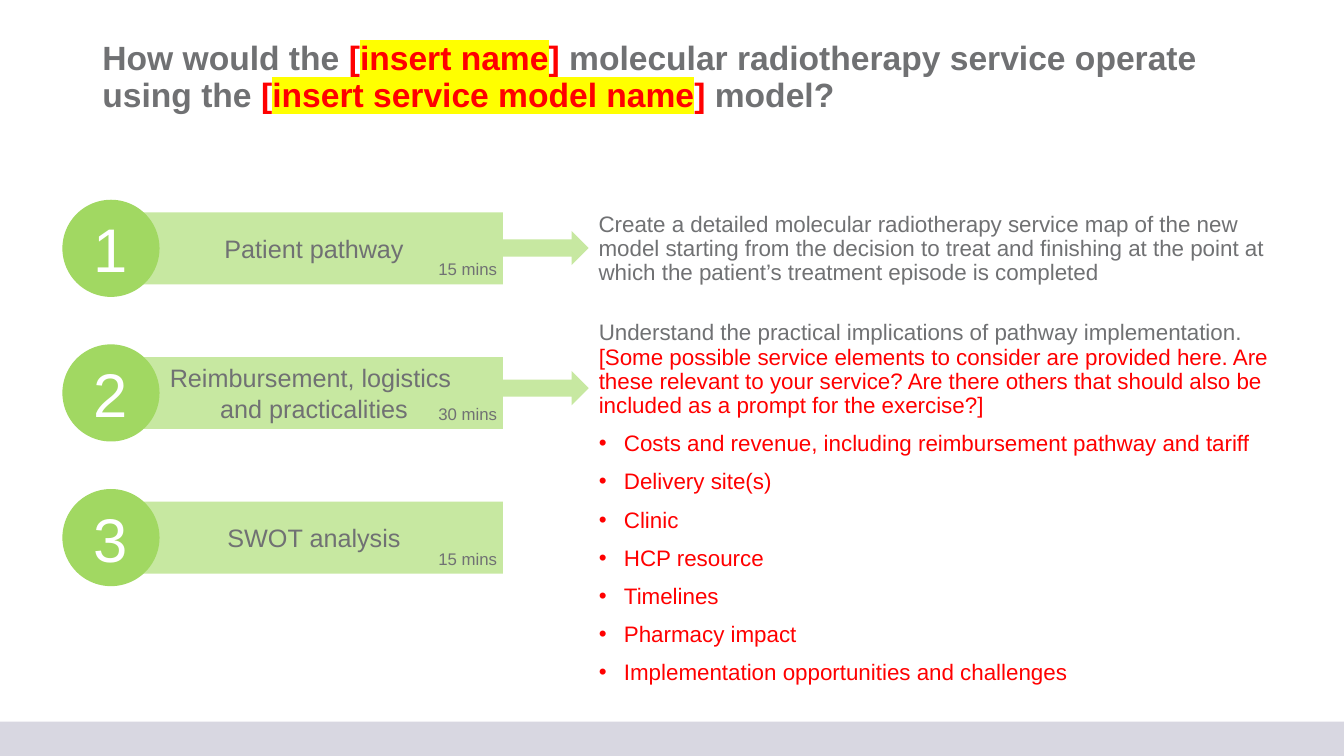
from lxml import etree
from pptx import Presentation
from pptx import util as u
from pptx.dml.color import RGBColor
from pptx.enum import shapes, text
from pptx.oxml.ns import qn

COLOURS = {"grey": "707173", "red": "FF0000", "yellow": "FFFF00", "white": "FFFFFF",
           "bar": "C7E8A1", "circle": "A1D862", "footer": "D8D7E1"}
FONT = "Arial"

TITLE = [
    ("How would the ", "grey"),
    ("[", "red"), ("insert name", "red", "yellow"), ("] ", "red"),
    ("molecular radiotherapy service operate using the ", "grey"),
    ("[", "red"), ("insert service model name", "red", "yellow"), ("]", "red"),
    (" model?", "grey"),
]
STEPS = [
    ("Patient pathway", "15 mins"),
    ("Reimbursement, logistics \nand practicalities", "30 mins"),
    ("SWOT analysis", "15 mins"),
]
PATHWAY_DETAIL = [(
    "Create a detailed molecular radiotherapy service map of the new model starting from "
    "the decision to treat and finishing at the point at which the patient’s treatment "
    "episode is completed", "grey")]
PRACTICAL_DETAIL = [
    ("Understand the practical implications of pathway implementation.", "grey"),
    ("[Some possible service elements to consider are provided here. Are these relevant to "
     "your service? Are there others that should also be included as a prompt for the "
     "exercise?]", "red"),
]
ELEMENTS = [
    "Costs and revenue, including reimbursement pathway and tariff",
    "Delivery site(s)",
    "Clinic",
    "HCP resource",
    "Timelines",
    "Pharmacy impact",
    "Implementation opportunities and challenges",
]

PAGE_W, PAGE_H, FOOTER_H = 960, 540, 24.5
BAR_X, BAR_W, BAR_H = 89.3, 270, 51.4
FIRST_MIDDLE, PITCH = 177.4, 103.3
CIRCLE_X, CIRCLE = 44.6, 69.4
TIME_X, TIME_W, TIME_H = 306, 56.9, 21.6
ARROW_W, ARROW_H = 61.2, 24.5
ARROW_TOPS = [164.9, 265]
DETAIL_X, DETAIL_W = BAR_X + BAR_W + ARROW_W, 504
BULLET_INDENT = 18

DETAIL_FORMAT = {"line_spacing": 0.9, "space_before": u.Pt(10),
                 "alignment": text.PP_ALIGN.LEFT}
CENTRED = {"alignment": text.PP_ALIGN.CENTER}
MIDDLE = {"vertical_anchor": text.MSO_ANCHOR.MIDDLE, "word_wrap": True,
          "auto_size": text.MSO_AUTO_SIZE.NONE}
FITTED = {"word_wrap": False, "auto_size": text.MSO_AUTO_SIZE.SHAPE_TO_FIT_TEXT}


def apply(target, values):
    for name, value in values.items():
        setattr(target, name, value)


def rgb(name):
    return RGBColor.from_string(COLOURS[name])


def place(box, *lengths):
    apply(box, dict(zip(("left", "top", "width", "height"), map(u.Pt, lengths))))


def add_preset(page, kind, colour, *lengths):
    shape = page.shapes.add_shape(kind, *map(u.Pt, lengths))
    shape.shadow.inherit = False
    shape.fill.solid()
    shape.fill.fore_color.rgb = rgb(colour)
    shape.line.fill.background()
    return shape


def write(para, spans, size, para_format, bold=False):
    apply(para, para_format)
    for content, colour, *highlight in spans:
        for index, line in enumerate(content.split("\n")):
            if index:
                para.add_line_break()
            span = para.add_run()
            span.text = line
            apply(span.font, {"size": u.Pt(size), "name": FONT, "bold": bold})
            span.font.color.rgb = rgb(colour)
            if highlight:
                mark = etree.Element(qn("a:highlight"))
                etree.SubElement(mark, qn("a:srgbClr"), val=COLOURS[highlight[0]])
                span.font.fill._xPr.find(qn("a:solidFill")).addnext(mark)


def fill_text(box, spans, size, para_format, frame_format=MIDDLE, bold=False):
    apply(box.text_frame, frame_format)
    write(box.text_frame.paragraphs[0], spans, size, para_format, bold)


def set_bullet(para, indent, character=None):
    props = para._p.get_or_add_pPr()
    props.set("marL", str(u.Pt(indent)))
    props.set("indent", str(-u.Pt(indent)))
    if character:
        etree.SubElement(props, qn("a:buFont"), typeface=FONT)
        etree.SubElement(props, qn("a:buChar"), char=character)
    else:
        etree.SubElement(props, qn("a:buNone"))


def add_steps(page):
    middles = [FIRST_MIDDLE + PITCH * row for row in range(len(STEPS))]
    for (label, _), middle in zip(STEPS, middles):
        bar = add_preset(page, shapes.MSO_SHAPE.RECTANGLE, "bar",
                         BAR_X, middle - BAR_H / 2, BAR_W, BAR_H)
        fill_text(bar, [(label, "grey")], 18, CENTRED)
    for number, ((_, minutes), middle) in enumerate(zip(STEPS, middles), 1):
        circle = add_preset(page, shapes.MSO_SHAPE.OVAL, "circle",
                            CIRCLE_X, middle - CIRCLE / 2, CIRCLE, CIRCLE)
        fill_text(circle, [(str(number), "white")], 44, CENTRED)
        time = page.shapes.add_textbox(*map(u.Pt, (
            TIME_X, middle + BAR_H / 2 - TIME_H, TIME_W, TIME_H)))
        fill_text(time, [(minutes, "grey")], 12, {}, FITTED)
    for top in ARROW_TOPS:
        add_preset(page, shapes.MSO_SHAPE.RIGHT_ARROW, "bar",
                   BAR_X + BAR_W, top, ARROW_W, ARROW_H)


def add_details(page):
    pathway = page.shapes.add_textbox(*map(u.Pt, (DETAIL_X, 140.4, DETAIL_W, 75.6)))
    fill_text(pathway, PATHWAY_DETAIL, 16, DETAIL_FORMAT)

    body = page.placeholders[1]
    place(body, DETAIL_X, 239.8, DETAIL_W, 239.8)
    fill_text(body, PRACTICAL_DETAIL, 16, DETAIL_FORMAT)
    set_bullet(body.text_frame.paragraphs[0], 0)
    for element in ELEMENTS:
        para = body.text_frame.add_paragraph()
        write(para, [(element, "red")], 16, DETAIL_FORMAT)
        set_bullet(para, BULLET_INDENT, "•")


def main():
    deck = Presentation()
    apply(deck, {"slide_width": u.Pt(PAGE_W), "slide_height": u.Pt(PAGE_H)})
    page = deck.slides.add_slide(deck.slide_layouts[1])
    add_preset(page, shapes.MSO_SHAPE.RECTANGLE, "footer",
               0, PAGE_H - FOOTER_H, PAGE_W, FOOTER_H)
    title = page.shapes.title
    place(title, 66, 28.8, 828, 54)
    fill_text(title, TITLE, 24,
              {"line_spacing": 0.9, "alignment": text.PP_ALIGN.LEFT}, bold=True)
    add_steps(page)
    add_details(page)
    deck.save("out.pptx")


if __name__ == "__main__":
    main()
